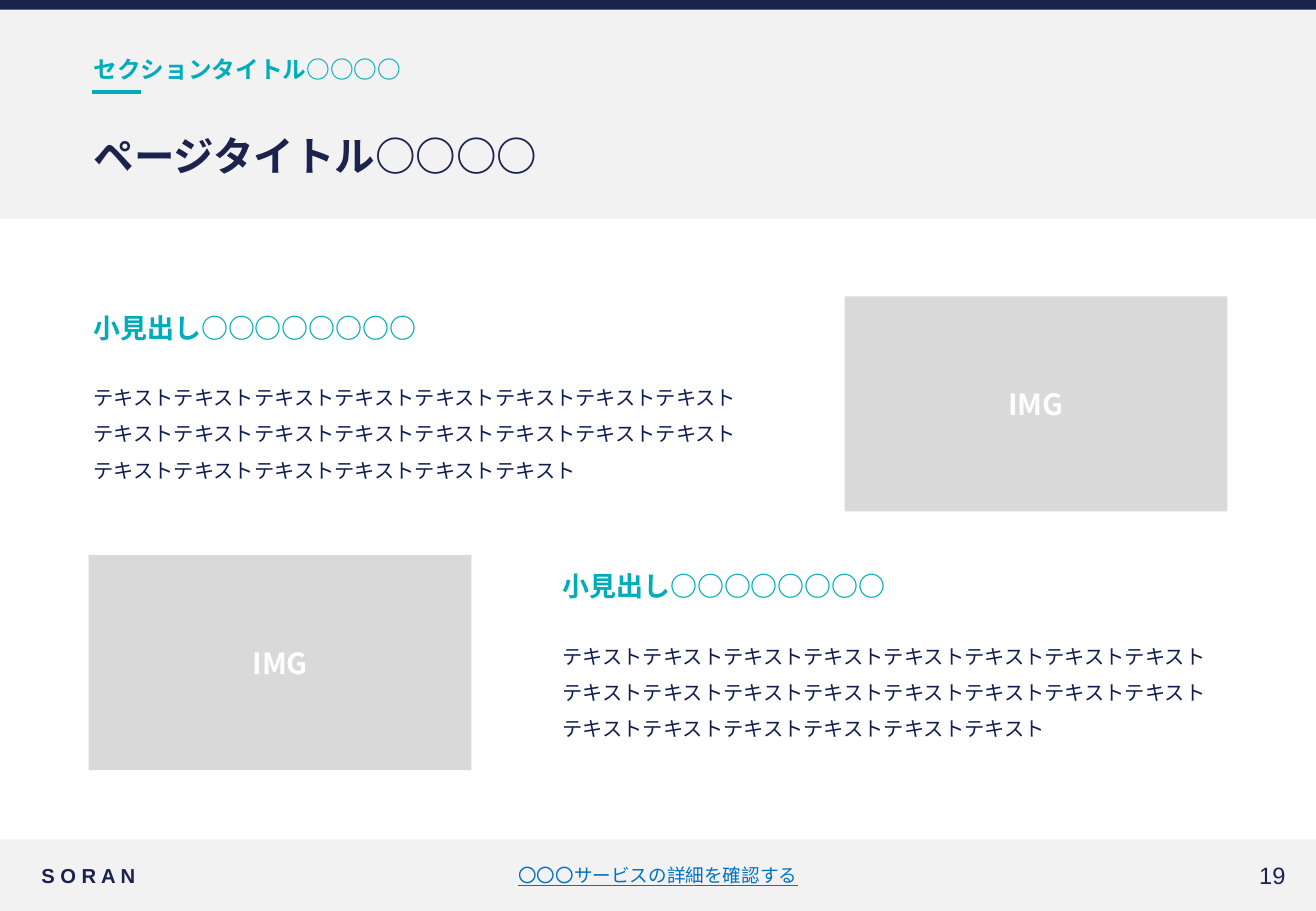
import pptx
import pptx.util
import pptx.dml.color
import pptx.enum.shapes
import pptx.enum.text
import pptx.oxml
import pptx.oxml.ns
from dataclasses import dataclass

PX = 9144  # EMU in one px, 100 px to the inch
SLIDE_W, SLIDE_H = 1083, 750
INSET = 4
MARGIN = 73
CONTENT_W = 937

ALIGN = pptx.enum.text.PP_ALIGN
ANCHOR = pptx.enum.text.MSO_ANCHOR


@dataclass(frozen=True)
class Theme:
    navy: str = "1B224C"
    ink: str = "0F1C50"
    teal: str = "00ACBA"
    link: str = "0070C0"
    band: str = "F2F2F2"
    image: str = "D9D9D9"
    white: str = "FFFFFF"
    latin: str = "Arial"
    cjk: str = "Noto Sans CJK JP"
    title: float = 24
    image_label: float = 17.3
    heading: float = 16
    section: float = 14
    number: float = 14
    body: float = 12
    footer_link: float = 11


T = Theme()


def px(n):
    return pptx.util.Emu(round(n * PX))


def rgb(value):
    return pptx.dml.color.RGBColor.from_string(value)


def set_all(obj, values):
    for name, value in values.items():
        setattr(obj, name, value)


def write(sp, text, size, color, font=T.cjk, anchor=ANCHOR.MIDDLE, wrap=True,
          para=None, **style):
    """Fill a shape with one formatted paragraph."""
    tf = sp.text_frame
    inset = px(INSET)
    set_all(tf, dict(margin_left=inset, margin_right=inset, margin_top=inset,
                     margin_bottom=inset, word_wrap=wrap, vertical_anchor=anchor))
    p = tf.paragraphs[0]
    set_all(p, para or {})
    r = p.add_run()
    r.text = text
    set_all(r.font, dict(name=font, size=pptx.util.Pt(size), **style))
    r.font.color.rgb = rgb(color)
    ea = pptx.oxml.parse_xml(
        f'<a:ea {pptx.oxml.ns.nsdecls("a")} typeface="{T.cjk}"/>')
    r.font._element.find(pptx.oxml.ns.qn("a:latin")).addnext(ea)


def add_text(s, box, *args, **kwargs):
    write(s.shapes.add_textbox(*map(px, box)), *args, **kwargs)


def add_rect(s, box, color):
    sp = s.shapes.add_shape(pptx.enum.shapes.MSO_SHAPE.RECTANGLE, *map(px, box))
    sp.shadow.inherit = False
    sp.fill.solid()
    sp.fill.fore_color.rgb = rgb(color)
    sp.line.fill.background()
    return sp


def add_header(s, box, section, title):
    x, y, w, h = box
    add_rect(s, box, T.band)
    add_rect(s, (x, y, w, 8), T.navy)
    # Short rule under the section title
    rule_x, rule_y = x + MARGIN + 3, y + 76
    rule = s.shapes.add_connector(
        pptx.enum.shapes.MSO_CONNECTOR.STRAIGHT,
        *map(px, (rule_x, rule_y, rule_x + 40, rule_y)))
    rule.line.color.rgb = rgb(T.teal)
    rule.line.width = pptx.util.Pt(2.5)
    rule._element.spPr.append(pptx.oxml.parse_xml(
        f'<a:effectLst {pptx.oxml.ns.nsdecls("a")}/>'))
    # Titles
    add_text(s, (x + MARGIN, y + 41, CONTENT_W, 28), section, T.section, T.teal,
             anchor=ANCHOR.TOP, bold=True)
    add_text(s, (x + MARGIN, y + 98, CONTENT_W, 59), title, T.title, T.navy, bold=True)


def add_feature(s, box, heading, body, image_left):
    """Heading and body on one side, image area on the other."""
    x, y, w, h = box
    text_w, image_w, heading_h, body_top = 551, 315, 51, 59
    text_x = x + w - text_w if image_left else x
    image_x = x if image_left else x + w - image_w
    add_text(s, (text_x, y, text_w, heading_h), heading, T.heading, T.teal, bold=True)
    add_text(s, (text_x, y + body_top, text_w, h - body_top), body, T.body, T.ink,
             font=T.latin, anchor=ANCHOR.TOP,
             para=dict(line_spacing=1.5, space_after=pptx.util.Pt(4.3)))
    write(add_rect(s, (image_x, y, image_w, h), T.image), "IMG", T.image_label,
          T.white, para=dict(alignment=ALIGN.CENTER), bold=True)


def add_footer(s, box, brand, link, number):
    x, y, w, h = box
    add_rect(s, box, T.band)
    top, text_h, side_w, link_w = y + 14, 31, 107, 423
    add_text(s, (x + 30, top, side_w, text_h), brand, T.body, T.navy,
             font=T.latin, wrap=False, bold=True)
    add_text(s, (x + (w - link_w) / 2, top, link_w, text_h), link, T.footer_link,
             T.link, font=T.latin, para=dict(alignment=ALIGN.CENTER), underline=True)
    add_text(s, (x + w - 21 - side_w, top, side_w, text_h), number, T.number, T.navy,
             font=T.latin, wrap=False, para=dict(alignment=ALIGN.RIGHT))


def main():
    prs = pptx.Presentation()
    prs.slide_width, prs.slide_height = px(SLIDE_W), px(SLIDE_H)
    s = prs.slides.add_slide(prs.slide_layouts[6])

    # Header and footer bands
    add_footer(s, (0, 691, SLIDE_W, 59), "S O R A N", "〇〇〇サービスの詳細を確認する", "19")
    add_header(s, (0, 0, SLIDE_W, 180), "セクションタイトル○○○○", "ページタイトル○○○○")

    # Two features with the image on alternating sides
    feature_top, feature_h, pitch = 244, 177, 213
    for i in range(2):
        add_feature(s, (MARGIN, feature_top + i * pitch, CONTENT_W, feature_h),
                    "小見出し○○○○○○○○", "テキスト" * 22, image_left=i % 2 == 1)

    prs.save("out.pptx")


if __name__ == "__main__":
    main()
